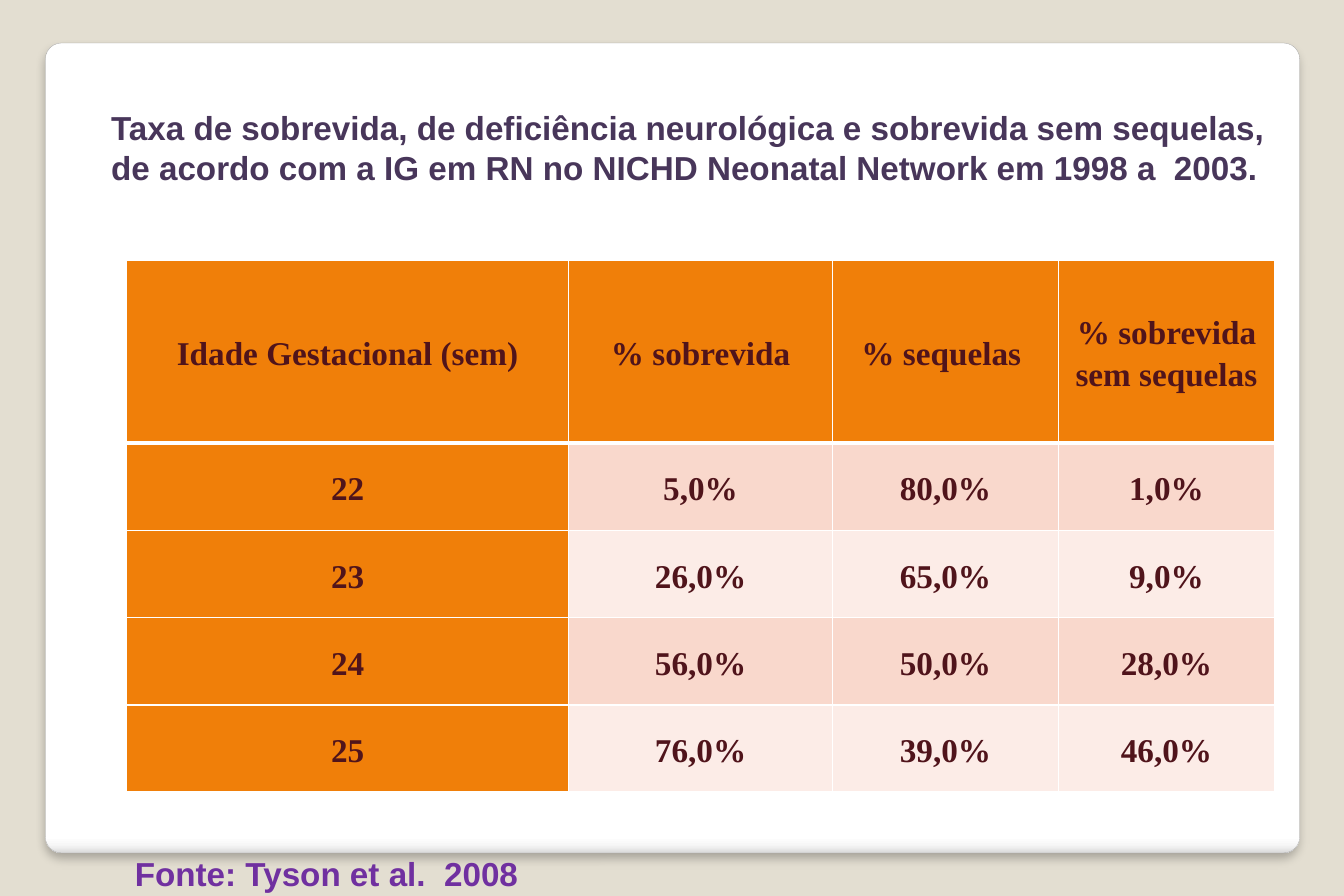
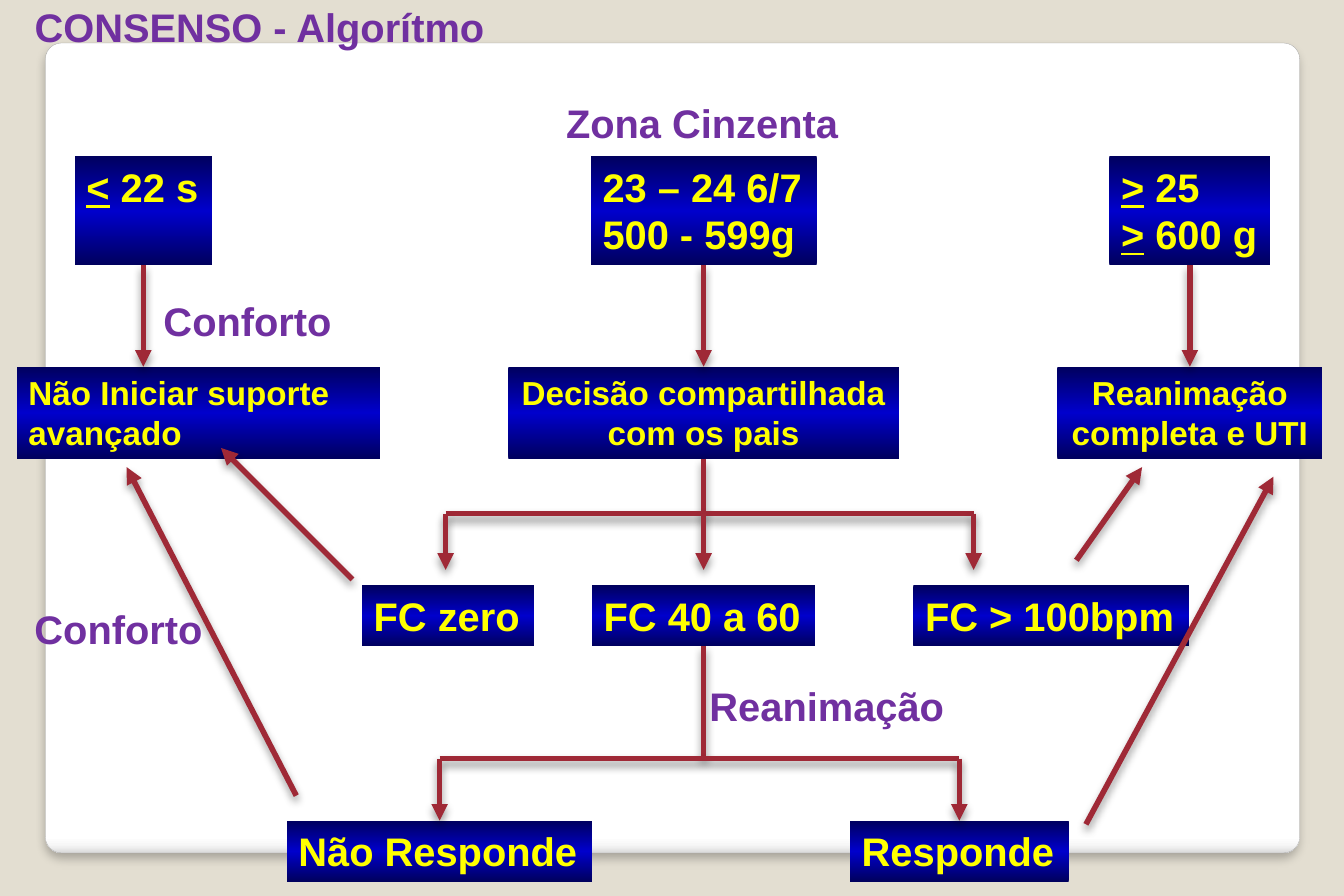
from lxml import etree
from pptx import Presentation
from pptx.dml.color import RGBColor
from pptx.enum import shapes, text
from pptx.oxml.ns import qn
from pptx.util import Inches, Pt

BEIGE = RGBColor(0xE3, 0xDE, 0xD1)
WHITE = RGBColor(0xFF, 0xFF, 0xFF)
PALE = RGBColor(0xF7, 0xF7, 0xF7)
SILVER = RGBColor(0xDA, 0xDA, 0xDA)
GREY = RGBColor(0xA4, 0xA4, 0xA4)
BLACK = RGBColor(0, 0, 0)
PLUM = RGBColor(0x48, 0x36, 0x5A)
PURPLE = RGBColor(0x70, 0x30, 0xA0)
ORANGE = RGBColor(0xF0, 0x7F, 0x09)
MAROON = RGBColor(0x50, 0x14, 0x1B)
BANDS = RGBColor(0xF9, 0xD8, 0xCC), RGBColor(0xFC, 0xEC, 0xE7)
NAVY = RGBColor(0, 0, 0x5E)
BLUE = RGBColor(0, 0, 0xCC)
YELLOW = RGBColor(0xFF, 0xFF, 0)
RED = RGBColor(0x9F, 0x29, 0x36)

LEFT, CENTER = text.PP_ALIGN.LEFT, text.PP_ALIGN.CENTER
TOP, MIDDLE = text.MSO_ANCHOR.TOP, text.MSO_ANCHOR.MIDDLE

HEADING = [
    "Taxa de sobrevida, de deficiência neurológica e sobrevida sem sequelas, ",
    "de acordo com a IG em RN no NICHD Neonatal Network em 1998 a  2003.",
]
RATES = [
    ("Idade Gestacional (sem)", "% sobrevida", "% sequelas ",
     "% sobrevida sem sequelas"),
    ("22", "5,0%", "80,0%", "1,0%"),
    ("23", "26,0%", "65,0%", "9,0%"),
    ("24", "56,0%", "50,0%", "28,0%"),
    ("25", "76,0%", "39,0%", "46,0%"),
]
COLS = 3.7, 2.21, 1.89, 1.81
ROWS = 1.53, 0.73, 0.73, 0.73, 0.73

# Row of the flow chart: top, height, text size
TIERS = {"age": (1.31, 0.91, 24), "act": (3.07, 0.77, 20),
         "rate": (4.9, 0.51, 24), "end": (6.87, 0.51, 24)}
MID, EAST = 5.89, 9.96  # column centres
FORK, SPLIT = 4.3, 6.35  # heights of the two branching bars
TIP = 4.77
# Name: tier, centre, width, alignment, lines
BOXES = {
    "low": ("age", 1.2, 1.15, LEFT, ["< 22 s"]),
    "gray": ("age", MID, 1.89, LEFT, ["23 – 24 6/7", "500 - 599g"]),
    "high": ("age", EAST, 1.35, LEFT, ["> 25", "> 600 g"]),
    "none": ("act", 1.66, 3.04, LEFT, ["Não Iniciar suporte avançado"]),
    "share": ("act", MID, 3.27, CENTER, ["Decisão compartilhada", "com os pais"]),
    "full": ("act", EAST, 2.22, CENTER, ["Reanimação completa e UTI"]),
    "zero": ("rate", 3.75, 1.44, LEFT, ["FC zero"]),
    "slow": ("rate", MID, 1.87, LEFT, ["FC 40 a 60"]),
    "fast": ("rate", 8.8, 2.31, LEFT, ["FC > 100bpm"]),
    "fail": ("end", 3.68, 2.56, LEFT, ["Não Responde"]),
    "well": ("end", 8.03, 1.83, LEFT, ["Responde"]),
}
LABELS = [("Zona Cinzenta", 4.64, 0.78, 2.5), ("Conforto", 1.27, 2.43, 1.62),
          ("Conforto", 0.19, 5.01, 1.62), ("Reanimação", 5.84, 5.66, 2.19)]
# A name means the bottom of the box at the start, its top at the end
BARS = [("share", (MID, FORK)), ((3.73, FORK), (8.15, FORK)),
        ("slow", (MID, SPLIT)), ((3.68, SPLIT), (8.03, SPLIT))]
ARROWS = [
    ("low", (1.2, 3.07)), ("gray", "share"), ("high", "full"),
    *(((x, FORK), (x, TIP)) for x in (3.73, MID, 8.15)),
    ((3.68, SPLIT), "fail"), ((8.03, SPLIT), "well"),
    ((2.95, 4.85), (1.85, 3.75)), ((2.48, 6.66), (1.06, 3.91)),
    ((9.01, 4.69), (9.56, 3.91)), ((9.09, 6.9), (10.66, 3.99)),
]


def add(parent, tag, **attrs):
    node = etree.SubElement(parent, qn(tag))
    for key, value in attrs.items():
        node.set(key, str(value))
    return node


def tint(parent, color):
    return add(parent, "a:srgbClr", val=color)


def shade(shape, stops):
    """Fill with a top-down gradient of (percent, colour) stops."""
    shape.fill.gradient()
    shape.fill.gradient_angle = 270
    ramp = shape.element.spPr.find(qn("a:gradFill")).find(qn("a:gsLst"))
    for old in list(ramp):
        ramp.remove(old)
    for pos, color in stops:
        tint(add(ramp, "a:gs", pos=pos * 1000), color)


def cast(effects, alpha, blur, dist):
    """Put a downward shadow in an effect list."""
    drop = add(effects, "a:outerShdw", blurRad=Pt(blur), dist=Pt(dist),
               dir=5400000, algn="ctr", rotWithShape=0)
    add(tint(drop, BLACK), "a:alpha", val=alpha * 1000)


def write(frame, lines, size, color, align=LEFT, anchor=TOP, wrap=False,
          font="Arial", space=1.0):
    frame.word_wrap = wrap
    frame.vertical_anchor = anchor
    for i, line in enumerate(lines):
        para = frame.add_paragraph() if i else frame.paragraphs[0]
        para.alignment = align
        para.line_spacing = space
        cut = 1 if line[0] in "<>" else 0
        for part, under in ((line[:cut], True), (line[cut:], False)):
            if part:
                run = para.add_run()
                run.text = part
                run.font.name, run.font.size = font, Pt(size)
                run.font.bold, run.font.underline = True, under
                run.font.color.rgb = color


def title(slide, lines, spot, size, color, anchor):
    head = slide.shapes.title
    head.left, head.top, head.width, head.height = map(Inches, spot)
    head.text_frame.auto_size = text.MSO_AUTO_SIZE.NONE
    write(head.text_frame, lines, size, color, anchor=anchor)


def label(slide, line, x, y, w, size=24, h=0.51):
    box = slide.shapes.add_textbox(*map(Inches, (x, y, w, h)))
    write(box.text_frame, [line], size, PURPLE)


def theme(deck, slide):
    """Give the master its background and the rounded white panel."""
    master = deck.slide_master
    master.background.fill.solid()
    master.background.fill.fore_color.rgb = BEIGE
    panel = slide.shapes.add_shape(
        shapes.MSO_SHAPE.ROUNDED_RECTANGLE,
        *map(Inches, (0.38, 0.36, 10.5, 6.78)))
    panel.adjustments[0] = 0.02
    shade(panel, [(0, WHITE), (98, WHITE), (99, PALE), (100, SILVER)])
    panel.line.color.rgb = GREY
    panel.line.width = Pt(0.16)
    panel.shadow.inherit = False
    cast(panel.element.spPr.find(qn("a:effectLst")), 25, 6, 4)
    panel.element.nvSpPr.cNvPr.set("id", "20")
    master.shapes.element.insert(2, panel.element)


def edge(cell, heavy):
    """White cell borders; the sides in heavy are 3 pt, the others 1 pt."""
    props = cell._tc.get_or_add_tcPr()
    for side in "LRTB":
        line = add(props, "a:ln" + side, w=Pt(3 if side in heavy else 1))
        tint(add(line, "a:solidFill"), WHITE)


def grid(slide):
    spot = map(Inches, (1.06, 2.18, sum(COLS), sum(ROWS)))
    table = slide.shapes.add_table(len(ROWS), len(COLS), *spot).table
    table.first_row = table.horz_banding = False
    for col, w in zip(table.columns, COLS):
        col.width = Inches(w)
    for r, (row, h) in enumerate(zip(table.rows, ROWS)):
        row.height = Inches(h)
        for c, cell in enumerate(row.cells):
            cell.margin_left = cell.margin_right = Inches(0.08)
            cell.margin_top = cell.margin_bottom = 0
            edge(cell, {0: "B", 1: "T"}.get(r, ""))
            cell.fill.solid()
            plain = r and c
            cell.fill.fore_color.rgb = BANDS[(r - 1) % 2] if plain else ORANGE
            write(cell.text_frame, [RATES[r][c]], 20, MAROON, CENTER,
                  wrap=True, font="Times New Roman", space=1.15)
            cell.vertical_anchor = MIDDLE


def block(slide, tier, mid, w, align, lines):
    y, h, size = TIERS[tier]
    box = slide.shapes.add_shape(shapes.MSO_SHAPE.RECTANGLE,
                                 *map(Inches, (mid - w / 2, y, w, h)))
    shade(box, [(0, NAVY), (50, BLUE), (100, NAVY)])
    box.line.fill.background()
    box.shadow.inherit = False
    write(box.text_frame, lines, size, YELLOW, align,
          wrap=tier == "act" and len(lines) == 1)
    return box


def link(slide, boxes, start, end, arrow):
    a, b = ((0, 0) if p in boxes else p for p in (start, end))
    wire = slide.shapes.add_connector(shapes.MSO_CONNECTOR.STRAIGHT,
                                      *map(Inches, (*a, *b)))
    if start in boxes:
        wire.begin_connect(boxes[start], 2)
    if end in boxes:
        wire.end_connect(boxes[end], 0)
    wire.line.color.rgb = RED
    wire.line.width = Pt(3.35)
    if arrow:
        add(wire.line._get_or_add_ln(), "a:tailEnd", type="triangle")
    cast(add(wire.element.spPr, "a:effectLst"), 40, 5.2, 3)


def main():
    deck = Presentation()
    deck.slide_width, deck.slide_height = Inches(11.25), Inches(7.5)
    rates, flow = (deck.slides.add_slide(deck.slide_layouts[5])
                   for _ in range(2))
    theme(deck, rates)

    title(rates, HEADING, (0.83, 0.85, 10.01, 0.77), 20, PLUM, MIDDLE)
    grid(rates)
    label(rates, "Fonte: Tyson et al.  2008", 1.03, 7.09, 3.43, 20, 0.44)

    title(flow, ["CONSENSO - Algorítmo"], (0.19, -0.03, 4, 0.51), 24,
          PURPLE, TOP)
    boxes = {name: block(flow, *box) for name, box in BOXES.items()}
    for wires, arrow in ((BARS, False), (ARROWS, True)):
        for start, end in wires:
            link(flow, boxes, start, end, arrow)
    for item in LABELS:
        label(flow, *item)
    deck.save("out.pptx")


if __name__ == "__main__":
    main()
